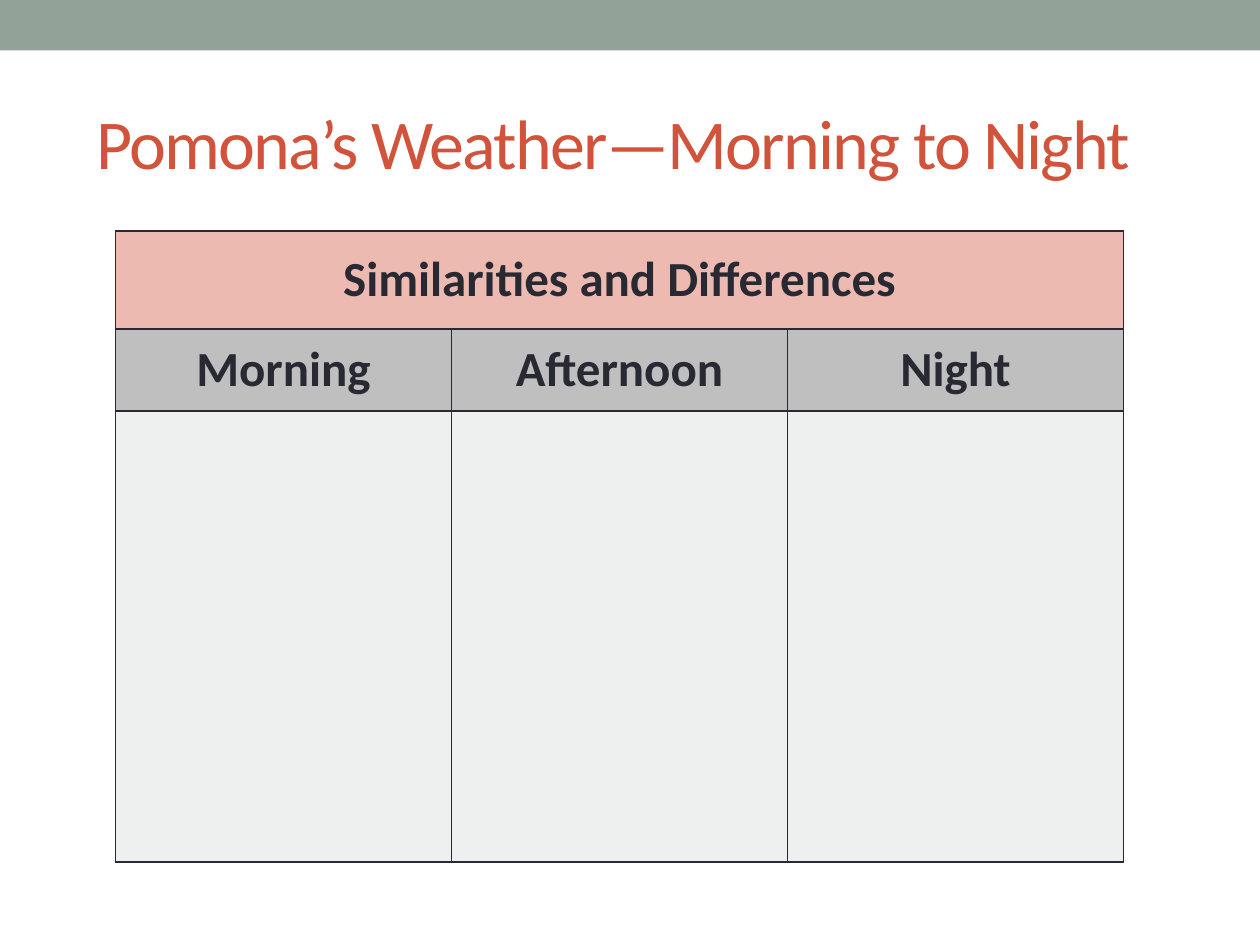
"""Build the weather comparison slide with its three-column table."""
from lxml.etree import SubElement
from pptx import Presentation
from pptx.dml.color import RGBColor
from pptx.enum.shapes import MSO_SHAPE as Shape
from pptx.enum.text import MSO_ANCHOR as Anchor, PP_ALIGN as Align
from pptx.oxml.ns import qn
from pptx.util import Pt

TITLE = "Pomona’s Weather—Morning to Night"
HEADING = "Similarities and Differences"
PERIODS = ["Morning", "Afternoon", "Night"]
COLORS = {
    "band": "93A299",
    "title": "D2533C",
    "ink": "292934",
    "heading": "EDBAB1",
    "period": "BFBFBF",
    "body": "EEF0EF",
}
ROWS = [
    ([HEADING], "heading", 56),
    (PERIODS, "period", 47),
    ([""] * len(PERIODS), "body", 257.5),
]
TITLE_FORMAT = {"name": "Calibri", "size": Pt(40)}
CELL_FORMAT = {"name": "Calibri", "size": Pt(28), "bold": True}
TABLE_LEFT, TABLE_TOP, TABLE_WIDTH = 66, 132, 576


def paint(fill, color):
    fill.solid()
    fill.fore_color.rgb = RGBColor.from_string(COLORS[color])


def write(paragraph, text, font_format, color):
    run = paragraph.add_run()
    run.text = text
    for name, value in font_format.items():
        setattr(run.font, name, value)
    run.font.color.rgb = RGBColor.from_string(COLORS[color])
    return run


def add_borders(cell):
    properties = cell._tc.get_or_add_tcPr()
    for index, side in enumerate(("lnL", "lnR", "lnT", "lnB")):
        line = SubElement(properties, qn(f"a:{side}"), w=str(Pt(1)))
        fill = SubElement(line, qn("a:solidFill"))
        SubElement(fill, qn("a:srgbClr"), val=COLORS["ink"])
        properties.insert(index, line)


def add_band(slide):
    band = slide.shapes.add_shape(Shape.RECTANGLE, 0, 0, Pt(720), Pt(28.8))
    band.shadow.inherit = False
    paint(band.fill, "band")
    band.line.fill.background()


def add_title(slide):
    box = slide.shapes.add_textbox(Pt(48), Pt(42), Pt(636), Pt(78))
    frame = box.text_frame
    frame.word_wrap = True
    frame.vertical_anchor = Anchor.MIDDLE
    run = write(frame.paragraphs[0], TITLE, TITLE_FORMAT, "title")
    run.font._element.set("spc", "-100")


def add_comparison(slide):
    height = sum(row_height for _, _, row_height in ROWS)
    frame = slide.shapes.add_table(
        len(ROWS), len(PERIODS), Pt(TABLE_LEFT), Pt(TABLE_TOP), Pt(TABLE_WIDTH), Pt(height)
    )
    table = frame.table
    for column in table.columns:
        column.width = Pt(TABLE_WIDTH / len(PERIODS))
    for row, (texts, color, row_height) in zip(table.rows, ROWS):
        row.height = Pt(row_height)
        for cell in row.cells:
            paint(cell.fill, color)
            add_borders(cell)
        for cell, text in zip(row.cells, texts):
            cell.vertical_anchor = Anchor.MIDDLE
            paragraph = cell.text_frame.paragraphs[0]
            paragraph.alignment = Align.CENTER
            if text:
                write(paragraph, text, CELL_FORMAT, "ink")
    table.cell(0, 0).merge(table.cell(0, len(PERIODS) - 1))


def main():
    presentation = Presentation()
    presentation.slide_width, presentation.slide_height = Pt(720), Pt(540)
    slide = presentation.slides.add_slide(presentation.slide_layouts[6])
    add_band(slide)
    add_title(slide)
    add_comparison(slide)
    presentation.save("out.pptx")


if __name__ == "__main__":
    main()
